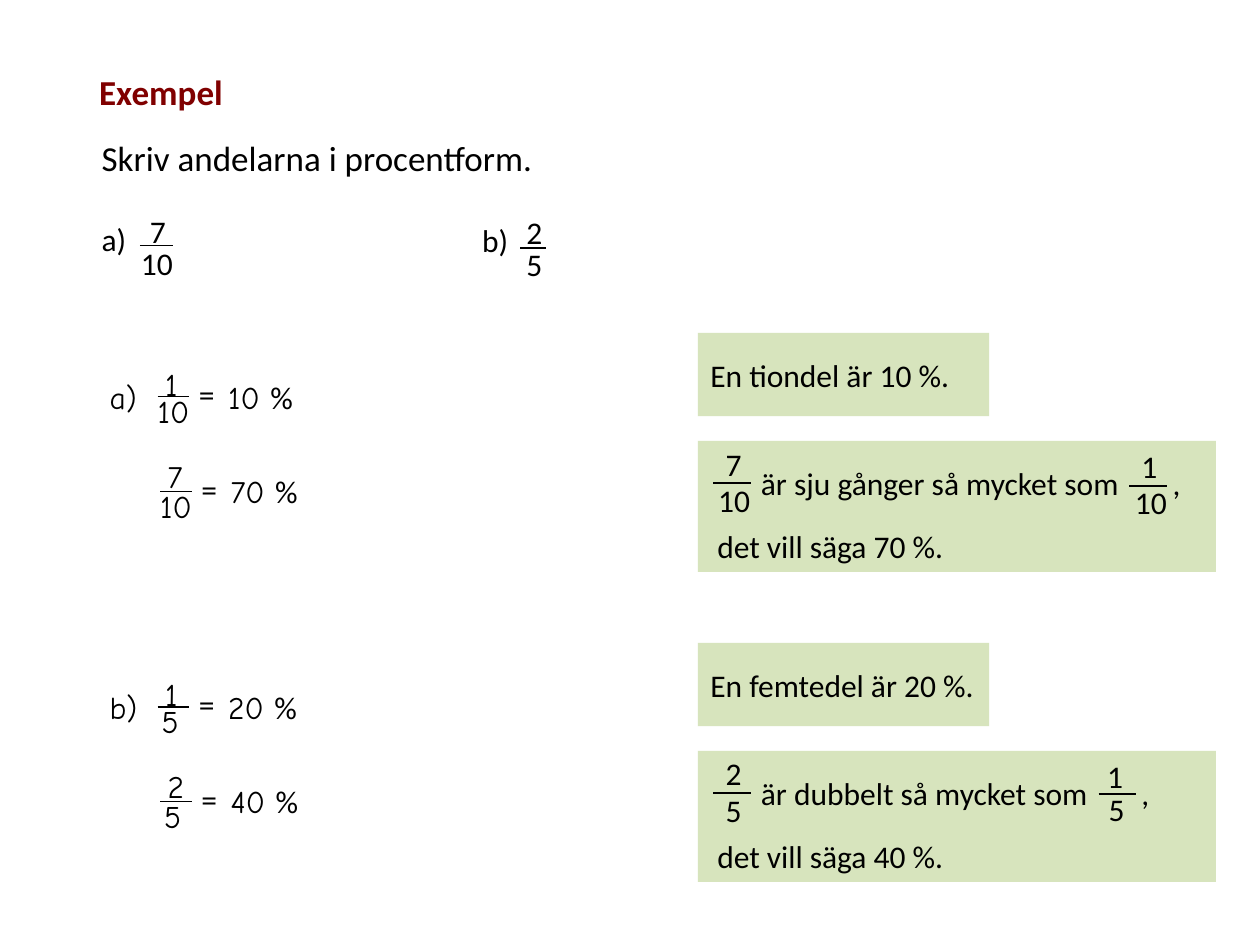
import pptx
import pptx.util
import pptx.dml.color
import pptx.enum.shapes
import pptx.enum.text
import pptx.oxml
import pptx.oxml.ns
from pptx.util import Cm

BODY, HAND = "Calibri", "Comic Neue"
BLOCK = 6.25  # vertical distance between solutions a and b


def color(value):
    return pptx.dml.color.RGBColor.from_string(value)


def text(x, y, w, content, font=BODY, size=18, fill="000000", bold=False):
    s = shapes.add_textbox(Cm(x), Cm(y), Cm(w), Cm(size * 0.056))
    tf = s.text_frame
    tf.word_wrap = True
    p = tf.paragraphs[0]
    p.text = content
    for r in p.runs:
        r.font.name, r.font.size, r.font.bold = font, pptx.util.Pt(size), bold
        r.font.color.rgb = color(fill)
    return p


prs = pptx.Presentation()
prs.slide_width, prs.slide_height = Cm(25.4), Cm(19.05)
shapes = prs.slides.add_slide(prs.slide_layouts[6]).shapes

# Heading and task
text(1.75, 1.3, 3.23, "Exempel", size=20, fill="800000", bold=True)
text(1.8, 2.62, 12.27, "Skriv andelarna i procentform.", size=20)
text(1.8, 4.32, 1.12, "a)")
text(9.47, 4.34, 1.12, "b)")

# Green explanation boxes: top, width, height, lines, tab stop of the comma
boxes = [
    (6.71, 5.87, 1.68, ["En tiondel är 10 %."], None),
    (8.89, 10.44, 2.64,
     ["\tär sju gånger så mycket som\t,", "det vill säga 70 %."], 9.32),
    (6.71 + BLOCK, 5.87, 1.68, ["En femtedel är 20 %."], None),
    (8.89 + BLOCK, 10.44, 2.64,
     ["\tär dubbelt så mycket som\t,", "det vill säga 40 %."], 8.69),
]
for y, w, h, lines, comma in boxes:
    s = shapes.add_shape(pptx.enum.shapes.MSO_SHAPE.RECTANGLE,
                         Cm(14.07), Cm(y), Cm(w), Cm(h))
    s.shadow.inherit = False
    s.fill.solid()
    s.fill.fore_color.rgb = color("D7E4BD")
    s.line.fill.background()
    tf = s.text_frame
    tf.word_wrap = True
    tf.vertical_anchor = pptx.enum.text.MSO_ANCHOR.TOP
    tf.margin_top = Cm(0.46)
    tf.text = "\n".join(lines)
    for i, p in enumerate(tf.paragraphs):
        p.alignment = pptx.enum.text.PP_ALIGN.LEFT
        if i:
            p.space_before = pptx.util.Pt(14.5)
            p._p.get_or_add_pPr().set("marL", str(Cm(0.14)))
        elif comma:
            tabs = pptx.oxml.parse_xml(
                f'<a:tabLst {pptx.oxml.ns.nsdecls("a")}>'
                f'<a:tab pos="{Cm(1.02)}" algn="l"/>'
                f'<a:tab pos="{Cm(comma)}" algn="l"/></a:tabLst>')
            p._p.get_or_add_pPr().append(tabs)
        for r in p.runs:
            r.font.name, r.font.size = BODY, pptx.util.Pt(18)
            r.font.color.rgb = color("000000")

# Fractions: numerator, denominator, bar x, y and width,
# numerator offset x and y, denominator offset x and y
fractions = [
    ("7", "10", 2.82, 4.95, 0.66, -0.05, -0.81, -0.23, -0.15),
    ("2", "5", 10.49, 5.0, 0.51, -0.13, -0.84, -0.13, -0.18),
    ("7", "10", 14.38, 9.73, 0.76, 0, -0.89, -0.15, -0.15),
    ("1", "10", 22.76, 9.8, 0.76, 0, -0.91, -0.13, -0.18),
    ("2", "5", 14.38, 9.73 + BLOCK, 0.76, 0, -0.91, 0, -0.15),
    ("1", "5", 22.15, 9.75 + BLOCK, 0.76, -0.08, -0.86, -0.05, -0.2),
]
fractions = [f + (BODY, 1) for f in fractions]

# Handwritten solutions: two equations for each part
solutions = [
    ("a)", "10", [("1", "10 %"), ("7", "70 %")]),
    ("b)", "5", [("1", "20 %"), ("2", "40 %")]),
]
for i, (label, den, steps) in enumerate(solutions):
    text(1.96, 7.49 + i * BLOCK, 1.27, label, HAND)
    den_dx = -0.25 if den == "10" else -0.17
    for j, (num, percent) in enumerate(steps):
        x, y = 3.18 + j * 0.05, 8 + i * BLOCK + j * 1.91
        fractions.append((num, den, x, y, 0.64, -0.1, -0.76 - j * 0.06,
                          den_dx, -0.22, HAND, 0.75))
        text(x + 0.58, y - 0.56, 0.71, "=")
        p = text(x + 1.17, y - 0.51, 2.1, percent[:-1], HAND)
        r = p.add_run()
        r.text = percent[-1]
        r.font.name, r.font.size = BODY, pptx.util.Pt(18)
        r.font.color.rgb = color("000000")

# Draw every fraction
for num, den, x, y, w, num_dx, num_dy, den_dx, den_dy, font, weight in fractions:
    text(x + num_dx, y + num_dy, 1, num, font)
    text(x + den_dx, y + den_dy, 1.25, den, font)
    s = shapes.add_connector(pptx.enum.shapes.MSO_CONNECTOR.STRAIGHT,
                             Cm(x), Cm(y), Cm(x + w), Cm(y))
    s.line.color.rgb = color("000000")
    s.line.width = pptx.util.Pt(weight)
    s._element.spPr.append(pptx.oxml.parse_xml(
        f'<a:effectLst {pptx.oxml.ns.nsdecls("a")}/>'))

prs.save("out.pptx")
